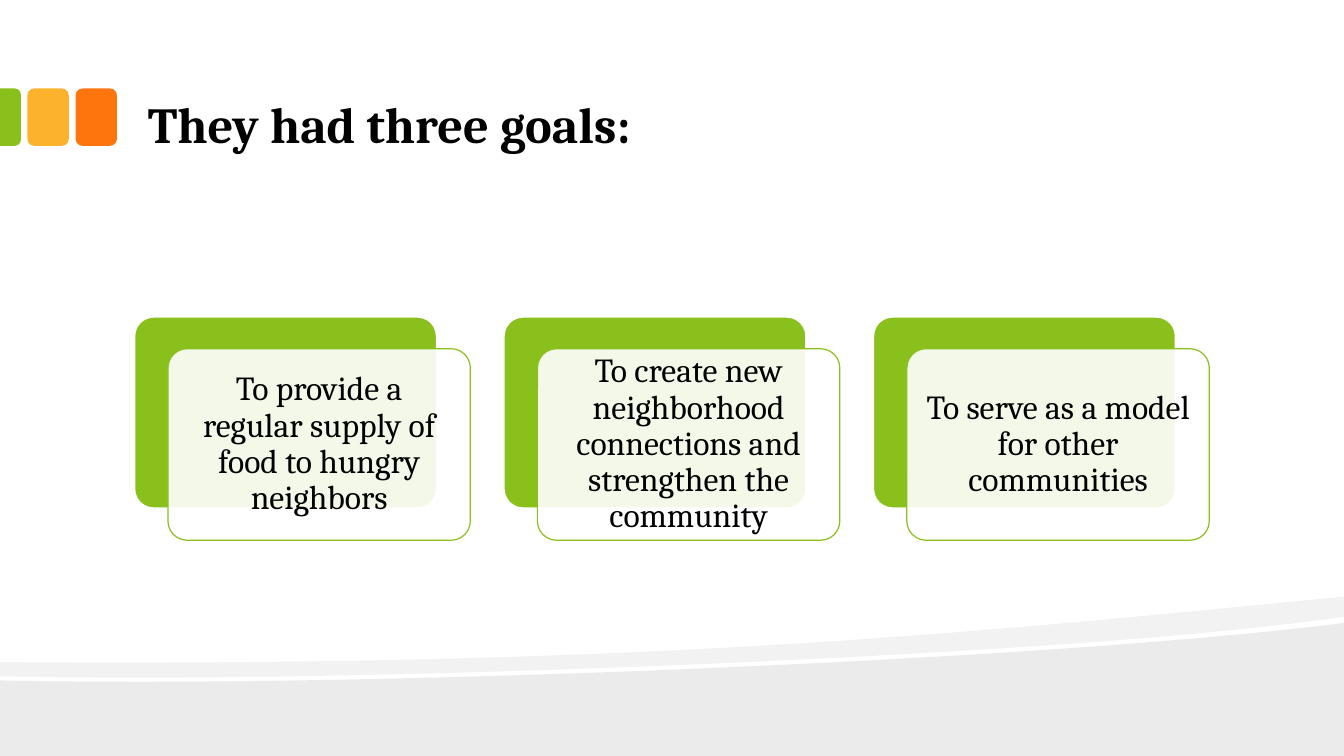
from dataclasses import dataclass
from typing import NamedTuple

from lxml import etree
from pptx import Presentation
from pptx.dml.color import RGBColor
from pptx.enum.shapes import MSO_SHAPE
from pptx.enum.text import MSO_ANCHOR, MSO_AUTO_SIZE, PP_ALIGN
from pptx.oxml.ns import qn
from pptx.util import Pt

ROUNDED = MSO_SHAPE.ROUNDED_RECTANGLE
HALF_ROUNDED = MSO_SHAPE.ROUND_2_SAME_RECTANGLE
MIDDLE, BOTTOM = MSO_ANCHOR.MIDDLE, MSO_ANCHOR.BOTTOM
LEFT, CENTER = PP_ALIGN.LEFT, PP_ALIGN.CENTER
NO_FIT = MSO_AUTO_SIZE.NONE


@dataclass(frozen=True)
class Theme:
    green: str = "89C01C"
    amber: str = "FCB22C"
    orange: str = "FE750E"
    black: str = "000000"
    white: str = "FFFFFF"
    font: str = "Cambria"
    title_size: float = 36
    body_size: float = 24


THEME = Theme()


class Frame(NamedTuple):
    left: float
    top: float
    width: float
    height: float


class Block(NamedTuple):
    frame: Frame
    color: str
    kind: int = ROUNDED
    corners: tuple[float, ...] = ()
    rotation: float = 0
    opacity: int = 100
    outline: str = ""
    weight: float = 0


class Curve(NamedTuple):
    start: tuple[float, float]
    pull_start: tuple[float, float]
    pull_end: tuple[float, float]
    end: tuple[float, float]


class Band(NamedTuple):
    upper: list[Curve]
    lower: list[Curve]
    opacity: int


PAGE_WIDTH, PAGE_HEIGHT = 960, 540
CURVE_STEPS = 24

TITLE = "They had three goals:"
TITLE_FRAME = Frame(96, 12.2, 767.5, 102.2)
GOALS = [
    "To provide a regular supply of food to hungry neighbors",
    "To create new neighborhood connections and strengthen the community",
    "To serve as a model for other communities",
]
CARD = Frame(96, 226.3, 216, 136.8)
CARD_PITCH = 263.9
FRONT_SHIFT = (24, 22.8)
CARD_CORNERS = (0.1,)

TABS = [
    Block(Frame(54, 63.2, 29.6, 41), THEME.orange),
    Block(Frame(19.6, 63.2, 29.6, 41), THEME.amber),
    Block(Frame(-13.1, 76.2, 41, 15), THEME.green, HALF_ROUNDED, (0.29, 0), 90),
]

BANDS = [
    Band([Curve((0, 486), (253.4, 491.8), (750.2, 471.6), (960, 445))],
         [Curve((960, 540), (640, 540), (320, 540), (0, 540))], 8),
    Band([Curve((0, 473), (469.4, 476.6), (699.1, 451.4), (960, 426.2))],
         [Curve((960, 440.6), (903.6, 448.6), (827.3, 455.8), (740.9, 461.5)),
          Curve((740.9, 461.5), (502.6, 477.4), (185.8, 487.4), (0, 483.1))], 5),
]


def apply(target: object, values: dict) -> None:
    for name, value in values.items():
        setattr(target, name, value)


def paint(shape, color: str, opacity: int = 100) -> None:
    shape.shadow.inherit = False
    shape.fill.solid()
    shape.fill.fore_color.rgb = RGBColor.from_string(color)
    if opacity < 100:
        tint = shape.fill._xPr.find(".//" + qn("a:srgbClr"))
        etree.SubElement(tint, qn("a:alpha"), val=str(opacity * 1000))


def draw_block(page, block: Block):
    shape = page.shapes.add_shape(block.kind, *map(Pt, block.frame))
    shape.rotation = block.rotation
    for index, corner in enumerate(block.corners):
        shape.adjustments[index] = corner
    paint(shape, block.color, block.opacity)
    if block.outline:
        shape.line.color.rgb = RGBColor.from_string(block.outline)
        shape.line.width = Pt(block.weight)
    else:
        shape.line.fill.background()
    return shape


def trace(curve: Curve) -> list[tuple[int, int]]:
    points = []
    for step in range(CURVE_STEPS + 1):
        t = step / CURVE_STEPS
        weights = ((1 - t) ** 3, 3 * t * (1 - t) ** 2, 3 * t * t * (1 - t), t ** 3)
        x, y = (sum(w * v for w, v in zip(weights, axis)) for axis in zip(*curve))
        points.append((Pt(x), Pt(y)))
    return points


def draw_band(page, band: Band) -> None:
    points = [point for curve in band.upper + band.lower for point in trace(curve)]
    builder = page.shapes.build_freeform(*points[0])
    builder.add_line_segments(points[1:], close=True)
    shape = builder.convert_to_shape()
    paint(shape, THEME.black, band.opacity)
    shape.line.fill.background()


def write(shape, text: str, frame_format: dict, para_format: dict, font_format: dict) -> None:
    box = shape.text_frame
    apply(box, {"word_wrap": True, "auto_size": NO_FIT, **frame_format})
    para = box.paragraphs[0]
    apply(para, para_format)
    span = para.add_run()
    span.text = text
    apply(span.font, {"name": THEME.font, **font_format})
    span.font.color.rgb = RGBColor.from_string(THEME.black)


def insets(side: float, end: float) -> dict:
    return {"margin_left": Pt(side), "margin_right": Pt(side),
            "margin_top": Pt(end), "margin_bottom": Pt(end)}


def draw_title(page) -> None:
    title = page.shapes.title
    apply(title, dict(zip(Frame._fields, map(Pt, TITLE_FRAME))))
    write(title, TITLE, {"vertical_anchor": BOTTOM, **insets(9.6, 4.8)},
          {"alignment": LEFT}, {"size": Pt(THEME.title_size), "bold": True})


def draw_goal(page, index: int, goal: str) -> None:
    back = CARD._replace(left=CARD.left + index * CARD_PITCH)
    front = back._replace(left=back.left + FRONT_SHIFT[0], top=back.top + FRONT_SHIFT[1])
    draw_block(page, Block(back, THEME.green, corners=CARD_CORNERS,
                           outline=THEME.white, weight=1.35))
    card = draw_block(page, Block(front, THEME.white, corners=CARD_CORNERS, opacity=90,
                                  outline=THEME.green, weight=0.85))
    write(card, goal, {"vertical_anchor": MIDDLE, **insets(7.2, 7.2)},
          {"alignment": CENTER, "line_spacing": 0.9}, {"size": Pt(THEME.body_size)})


def main() -> None:
    deck = Presentation()
    apply(deck, {"slide_width": Pt(PAGE_WIDTH), "slide_height": Pt(PAGE_HEIGHT)})
    page = deck.slides.add_slide(deck.slide_layouts.get_by_name("Title Only"))
    for band in BANDS:
        draw_band(page, band)
    for tab in TABS:
        draw_block(page, tab)
    draw_title(page)
    for index, goal in enumerate(GOALS):
        draw_goal(page, index, goal)
    deck.save("out.pptx")


if __name__ == "__main__":
    main()
